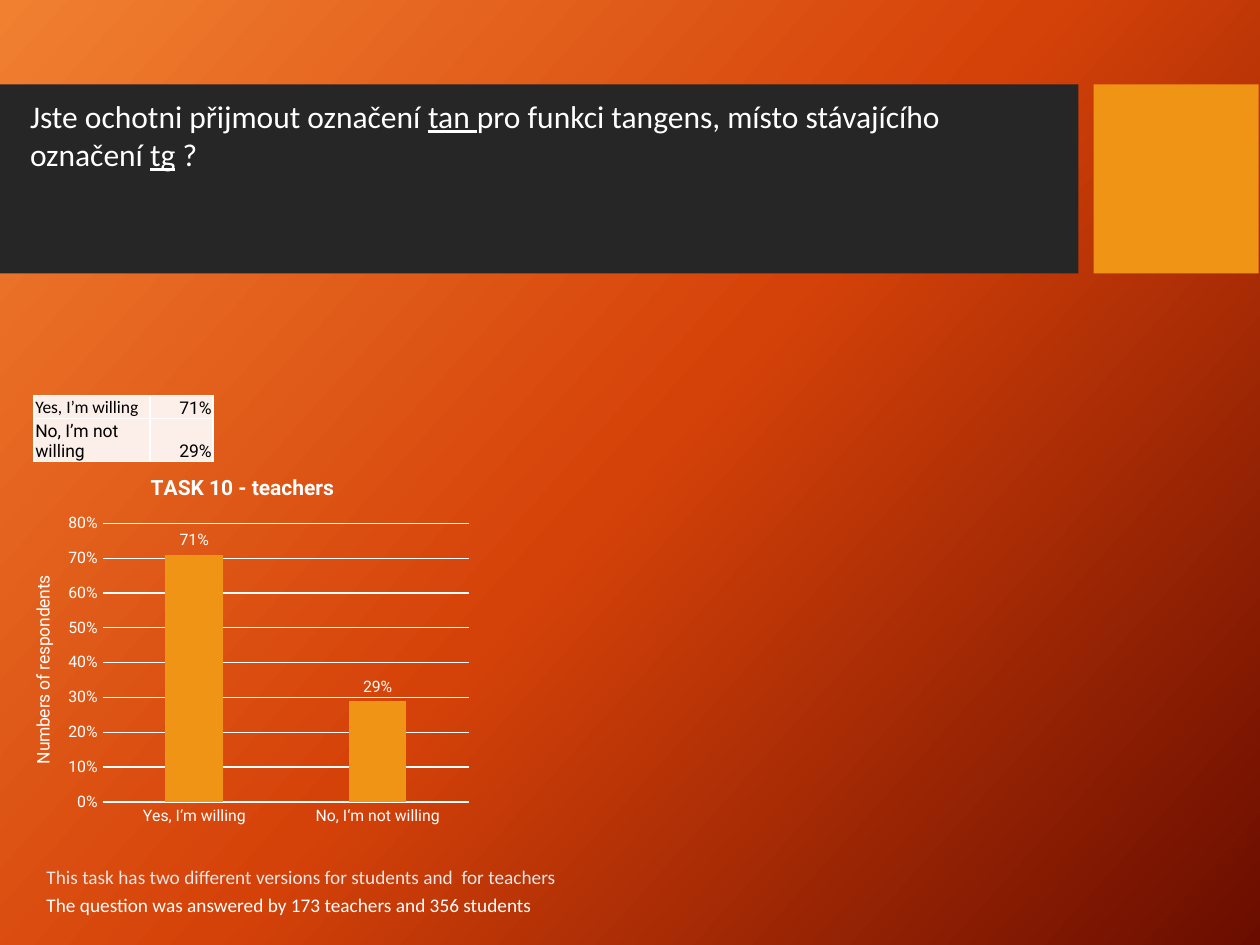
from lxml import etree
from pptx import Presentation
from pptx.chart.data import CategoryChartData
from pptx.dml.color import RGBColor
from pptx.enum import chart as ch, shapes, text
from pptx.oxml import parse_xml
from pptx.util import Inches, Pt

NS = 'xmlns:a="http://schemas.openxmlformats.org/drawingml/2006/main"'
WHITE, ORANGE = "FFFFFF", "F09415"


def style(font, color=WHITE, **values):
    """Set the font colour and any other font attributes."""
    font.color.rgb = RGBColor.from_string(color)
    for name, value in values.items():
        setattr(font, name, value)


def paint(fill, color):
    fill.solid()
    fill.fore_color.rgb = RGBColor.from_string(color)


prs = Presentation()
prs.slide_width, prs.slide_height = Inches(10), Inches(7.5)
s = prs.slides.add_slide(prs.slide_layouts[6])

# Background: three-stop diagonal gradient
s.background.fill.gradient()
grad = s.background.fill._fill._gradFill
for child in list(grad):
    grad.remove(child)
stops = [(0, "F18031"), (50, "D54209"), (100, "6A0D00")]
gs = "".join(f'<a:gs pos="{pos * 1000}"><a:srgbClr val="{c}"/></a:gs>' for pos, c in stops)
grad.append(parse_xml(f"<a:gsLst {NS}>{gs}</a:gsLst>"))
grad.append(parse_xml(f'<a:lin {NS} ang="{42 * 60000}" scaled="0"/>'))

# Title band and accent block
for left, width, color in [(0, 8.56, "262626"), (8.68, 1.31, ORANGE)]:
    sp = s.shapes.add_shape(shapes.MSO_SHAPE.RECTANGLE, Inches(left), Inches(0.67),
                            Inches(width), Inches(1.5))
    sp.shadow.inherit = False
    paint(sp.fill, color)
    sp.line.fill.background()

# Question and notes: box, wrap, size, colour, runs with underline flag
texts = [
    ((0.14, 0.72, 8.33, 1.62), True, 18, WHITE,
     [("Jste ochotni přijmout označení ", False), ("tan ", True),
      ("pro funkci tangens, místo stávajícího označení ", False),
      ("tg", True), (" ?", False)]),
    ((0.27, 7.04, 4.09, 0.29), False, 11, WHITE,
     [("The question was answered by 173 teachers and 356 students", False)]),
    ((0.27, 6.82, 4.29, 0.29), False, 11, "E7E6E6",
     [("This task has two different versions for students and  for teachers", False)]),
]
for box, wrap, size, color, runs in texts:
    tf = s.shapes.add_textbox(*map(Inches, box)).text_frame
    tf.word_wrap = wrap
    for words, underline in runs:
        r = tf.paragraphs[0].add_run()
        r.text = words
        style(r.font, color, name="Calibri", size=Pt(size), underline=underline)

# Table of answers
rows = [("Yes, I’m willing", "71%"), ("No, I’m not willing", "29%")]
table = s.shapes.add_table(2, 2, Inches(0.27), Inches(3.14), Inches(1.42), Inches(0.36)).table
for col, width in zip(table.columns, (0.92, 0.5)):
    col.width = Inches(width)
for i, row in enumerate(rows):
    table.rows[i].height = Inches(0.18)
    for j, words in enumerate(row):
        cell = table.cell(i, j)
        cell.text = words
        cell.vertical_anchor = text.MSO_ANCHOR.BOTTOM
        for side in ("left", "top", "right"):
            setattr(cell, f"margin_{side}", Inches(0.01))
        cell.margin_bottom = 0
        p = cell.text_frame.paragraphs[0]
        p.alignment = text.PP_ALIGN.RIGHT if j else text.PP_ALIGN.LEFT
        style(p.runs[0].font, "000000", size=Pt(10), bold=False,
              name="Roboto" if i or j else "Calibri")
        tcPr = cell._tc.get_or_add_tcPr()
        for edge in "LRTB":
            tcPr.append(parse_xml(f'<a:ln{edge} {NS} w="12700"><a:solidFill>'
                                  f'<a:srgbClr val="{WHITE}"/></a:solidFill></a:ln{edge}>'))
        paint(cell.fill, "FCEEE8")

# Column chart
data = CategoryChartData(number_format="0%")
data.categories = ["Yes, I‘m willing", "No, I‘m not willing"]
data.add_series("Series 1", (0.71, 0.29))
chart = s.shapes.add_chart(ch.XL_CHART_TYPE.COLUMN_CLUSTERED, Inches(0.05), Inches(3.61),
                           Inches(3.75), Inches(3), data).chart
style(chart.font, name="Roboto", size=Pt(10))
chart.has_legend = False
cat, val = chart.category_axis, chart.value_axis
for owner, words, size, bold in [(chart, "TASK 10 - teachers", 12, True),
                                 (val, "Numbers of respondents", 10, False)]:
    title = owner.chart_title if owner is chart else owner.axis_title
    title.text_frame.text = words
    style(title.text_frame.paragraphs[0].runs[0].font, name="Roboto", size=Pt(size), bold=bold)
chart.chart_title.include_in_layout = False

for axis in (cat, val):
    axis.major_tick_mark = axis.minor_tick_mark = ch.XL_TICK_MARK.NONE
    style(axis.tick_labels.font, name="Roboto", size=Pt(9))
val.minimum_scale, val.maximum_scale, val.major_unit = 0, 0.8, 0.1
val.tick_labels.number_format = "0%"
val.tick_labels.number_format_is_linked = False
val.format.line.fill.background()
for line in (cat.format.line, val.major_gridlines.format.line):
    paint(line.fill, WHITE)
    line.width = Pt(0.75)

plot = chart.plots[0]
plot.gap_width, plot.overlap, plot.vary_by_categories = 219, -27, False
paint(plot.series[0].format.fill, ORANGE)
labels = plot.series[0].data_labels
for name, value in {"show_value": True, "number_format": "0%",
                    "number_format_is_linked": False,
                    "position": ch.XL_LABEL_POSITION.OUTSIDE_END}.items():
    setattr(labels, name, value)
style(labels.font, name="Roboto", size=Pt(9))

prs.save("out.pptx")
